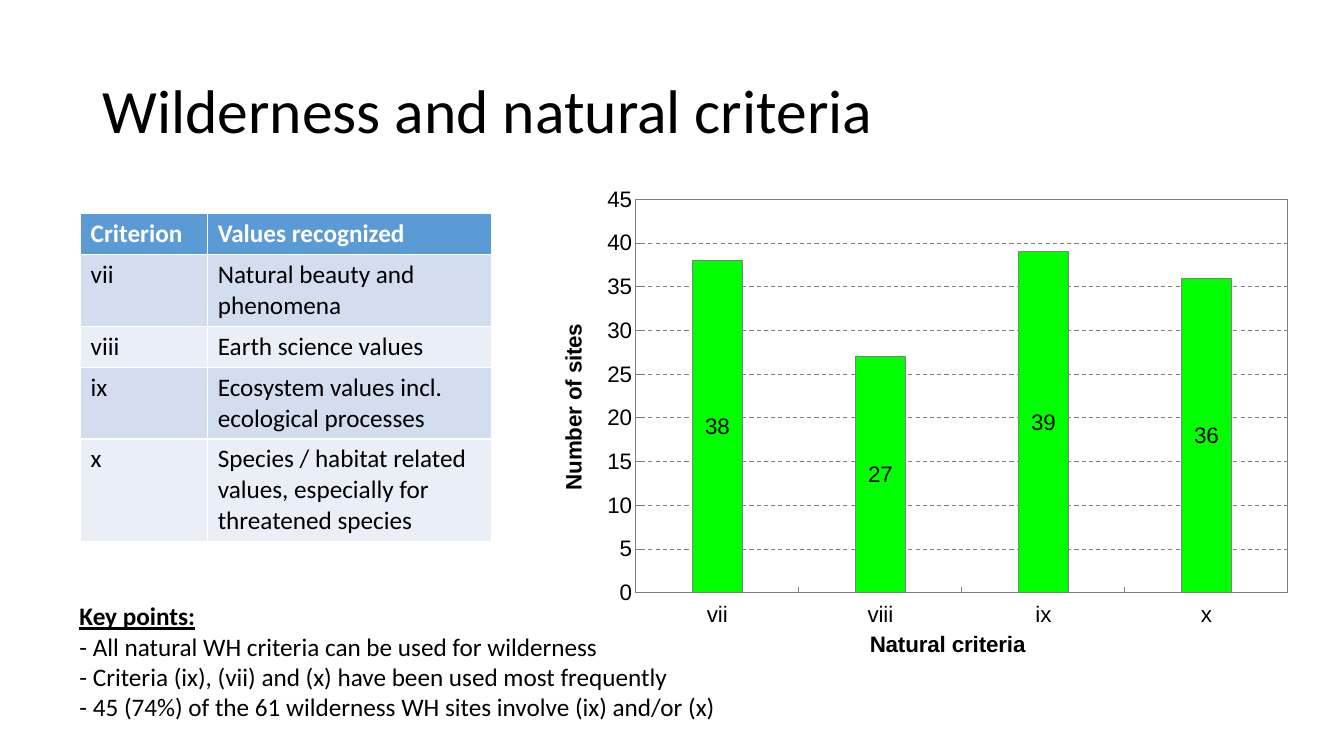
from dataclasses import dataclass

from lxml.etree import SubElement
from pptx import Presentation
from pptx.chart.data import CategoryChartData
from pptx.dml.color import RGBColor
from pptx.enum.chart import XL_CHART_TYPE as ChartType
from pptx.enum.chart import XL_LABEL_POSITION as LabelPosition
from pptx.enum.chart import XL_TICK_LABEL_POSITION as TickLabelPosition
from pptx.enum.chart import XL_TICK_MARK as TickMark
from pptx.enum.dml import MSO_LINE as LineDash
from pptx.enum.text import MSO_ANCHOR as Anchor
from pptx.enum.text import MSO_AUTO_SIZE as AutoSize
from pptx.enum.text import PP_ALIGN as Align
from pptx.oxml import parse_xml
from pptx.oxml.ns import nsdecls, qn
from pptx.util import Pt


@dataclass(frozen=True)
class Theme:
    text: RGBColor = RGBColor(0, 0, 0)
    white: RGBColor = RGBColor(255, 255, 255)
    header: RGBColor = RGBColor.from_string("5B9BD5")
    bands: tuple = (RGBColor.from_string("D2DEEF"), RGBColor.from_string("EAEFF7"))
    bar: RGBColor = RGBColor.from_string("00FF00")
    line: RGBColor = RGBColor.from_string("808080")
    line_width: float = Pt(0.75)
    font: str = "Calibri"
    chart_font: str = "Arial"
    title_size: float = Pt(44)
    body_size: float = Pt(18)
    chart_size: float = Pt(16)


theme = Theme()


def style_font(font, size, color=theme.text, bold=False, name=theme.font):
    font.name, font.size, font.bold = name, size, bold
    font.color.rgb = color


def style_line(line):
    line.color.rgb = theme.line
    line.width = theme.line_width


presentation = Presentation()
presentation.slide_width, presentation.slide_height = Pt(960), Pt(540)
slide = presentation.slides.add_slide(presentation.slide_layouts[5])

# Title
title = slide.shapes.title
title.left, title.top, title.width, title.height = Pt(66), Pt(28.75), Pt(828), Pt(104.4)
title.text_frame.text = "Wilderness and natural criteria"
title.text_frame.vertical_anchor = Anchor.MIDDLE
paragraph = title.text_frame.paragraphs[0]
paragraph.alignment = Align.LEFT
paragraph.line_spacing = 0.9
style_font(paragraph.runs[0].font, theme.title_size)

# Chart
chart_data = CategoryChartData()
chart_data.categories = ["vii", "viii", "ix", "x"]
chart_data.add_series("Series 1", [38, 27, 39, 36])
chart = slide.shapes.add_chart(
    ChartType.COLUMN_STACKED, Pt(396), Pt(124.6), Pt(534.2), Pt(349.2), chart_data
).chart
chart.has_legend = False
chart.has_title = False
style_font(chart.font, theme.chart_size, name=theme.chart_font)

plot = chart.plots[0]
plot.gap_width, plot.overlap = 230, 100
plot.vary_by_categories = False
bars = plot.series[0]
bars.format.fill.solid()
bars.format.fill.fore_color.rgb = theme.bar
style_line(bars.format.line)
plot.has_data_labels = True
labels = plot.data_labels
labels.show_value = True
labels.position = LabelPosition.CENTER
style_font(labels.font, theme.chart_size, name=theme.chart_font)

category_axis, value_axis = chart.category_axis, chart.value_axis
for axis, axis_title in ((category_axis, "Natural criteria"), (value_axis, "Number of sites")):
    axis.major_tick_mark = TickMark.INSIDE
    axis.minor_tick_mark = TickMark.NONE
    style_line(axis.format.line)
    style_font(axis.tick_labels.font, theme.chart_size, name=theme.chart_font)
    axis.axis_title.text_frame.text = axis_title
    title_run = axis.axis_title.text_frame.paragraphs[0].runs[0]
    style_font(title_run.font, theme.chart_size, bold=True, name=theme.chart_font)
category_axis.tick_label_position = TickLabelPosition.LOW
value_axis.minimum_scale, value_axis.maximum_scale, value_axis.major_unit = 0, 45, 5
value_axis.has_major_gridlines = True
gridlines = value_axis.major_gridlines.format.line
style_line(gridlines)
gridlines.dash_style = LineDash.DASH

# Plot area: fixed inner layout and a thin frame
plot_area = chart.element.find(".//" + qn("c:plotArea"))
for old_layout in plot_area.findall(qn("c:layout")):
    plot_area.remove(old_layout)
layout = parse_xml(f"<c:layout {nsdecls('c')}/>")
manual_layout = SubElement(layout, qn("c:manualLayout"))
for tag, value in (
    ("layoutTarget", "inner"), ("xMode", "edge"), ("yMode", "edge"),
    ("x", "0.109"), ("y", "0.051"), ("w", "0.872"), ("h", "0.805"),
):
    SubElement(manual_layout, qn(f"c:{tag}")).set("val", value)
plot_area.insert(0, layout)
plot_area.append(parse_xml(
    f'<c:spPr {nsdecls("c", "a")}><a:noFill/><a:ln w="{theme.line_width}"><a:solidFill>'
    f'<a:srgbClr val="{theme.line}"/></a:solidFill></a:ln></c:spPr>'
))

# Table of criteria; its default style draws the white cell borders
criteria = [
    ("Criterion", "Values recognized"),
    ("vii", "Natural beauty and phenomena"),
    ("viii", "Earth science values"),
    ("ix", "Ecosystem values incl. ecological processes"),
    ("x", "Species / habitat related values, especially for threatened species"),
]
row_height = Pt(29.2)
table = slide.shapes.add_table(
    len(criteria), 2, Pt(57.6), Pt(152.8), Pt(293.8), row_height * len(criteria)
).table
table.columns[0].width, table.columns[1].width = Pt(90.8), Pt(203)
for row_index, values in enumerate(criteria):
    is_header = row_index == 0
    for column_index, value in enumerate(values):
        cell = table.cell(row_index, column_index)
        cell.text_frame.text = value
        cell.fill.solid()
        cell.fill.fore_color.rgb = theme.header if is_header else theme.bands[(row_index - 1) % 2]
        style_font(cell.text_frame.paragraphs[0].runs[0].font, theme.body_size,
                   theme.white if is_header else theme.text, is_header)

# Key points
key_points = slide.shapes.add_textbox(Pt(49.7), Pt(425.5), Pt(470.2), Pt(94.3)).text_frame
key_points.word_wrap = False
key_points.auto_size = AutoSize.SHAPE_TO_FIT_TEXT
key_points.text = "\n".join([
    "Key points:",
    "- All natural WH criteria can be used for wilderness",
    "- Criteria (ix), (vii) and (x) have been used most frequently",
    "- 45 (74%) of the 61 wilderness WH sites involve (ix) and/or (x)",
])
for index, paragraph in enumerate(key_points.paragraphs):
    font = paragraph.runs[0].font
    style_font(font, theme.body_size, bold=index == 0)
    font.underline = index == 0

presentation.save("out.pptx")
